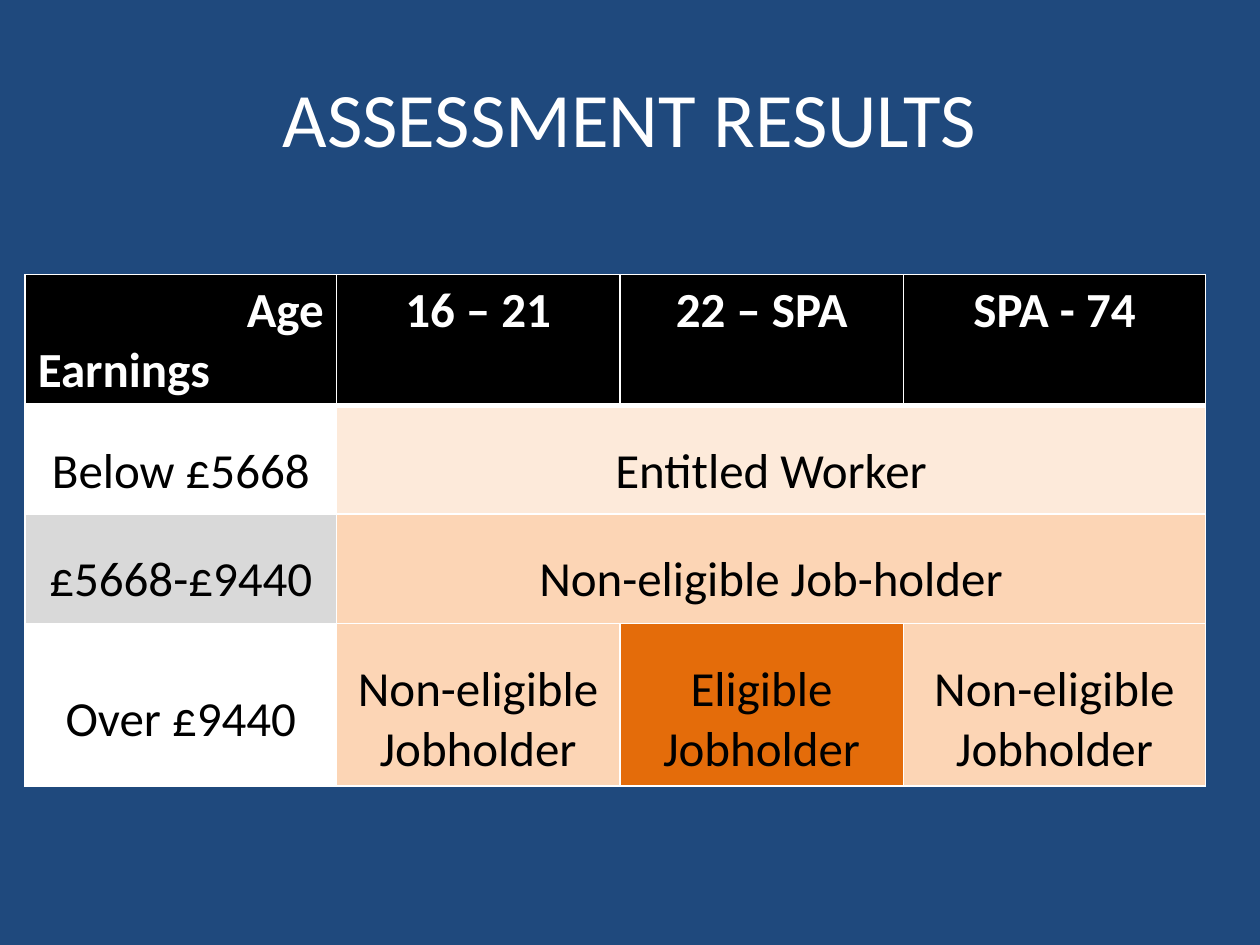
from pptx import Presentation
from pptx.dml.color import RGBColor
from pptx.enum.text import MSO_ANCHOR, PP_ALIGN
from pptx.oxml.ns import qn
from pptx.util import Inches, Pt
from lxml.etree import SubElement

NAVY = RGBColor(0x1F, 0x49, 0x7D)
WHITE = RGBColor(0xFF, 0xFF, 0xFF)
BLACK = RGBColor(0x00, 0x00, 0x00)
GREY = RGBColor(0xD9, 0xD9, 0xD9)
CREAM = RGBColor(0xFD, 0xEA, 0xDA)
PEACH = RGBColor(0xFC, 0xD5, 0xB5)
ORANGE = RGBColor(0xE4, 0x6C, 0x0A)

COLS = [2.47, 2.25, 2.25, 2.4]
ROWS = [1.04, 0.86, 0.87, 1.29]
HEAD = ["Age\nEarnings", "16 – 21", "22 – SPA", "SPA - 74"]
BODY = [
    [("Below £5668", WHITE), ("Entitled Worker", CREAM)],
    [("£5668-£9440", GREY), ("Non-eligible Job-holder", PEACH)],
    [
        ("Over £9440", WHITE),
        ("Non-eligible\nJobholder", PEACH),
        ("Eligible\nJobholder", ORANGE),
        ("Non-eligible\nJobholder", PEACH),
    ],
]


def style(para, size, color, bold=False):
    """Centre a paragraph and set its font."""
    para.alignment = PP_ALIGN.CENTER
    for run in para.runs:
        font = run.font
        font.name, font.size, font.bold = "Calibri", Pt(size), bold
        font.color.rgb = color


def border(cell, top, bottom):
    """Draw white lines on the four sides of a cell."""
    props = cell._tc.get_or_add_tcPr()
    for side, width in zip("LRTB", (1, 1, top, bottom)):
        line = SubElement(props, qn(f"a:ln{side}"), w=str(Pt(width)))
        fill = SubElement(line, qn("a:solidFill"))
        SubElement(fill, qn("a:srgbClr"), val=str(WHITE))


def write(cell, text, fill, color, bold=False):
    """Fill a cell and write its text."""
    cell.fill.solid()
    cell.fill.fore_color.rgb = fill
    cell.text_frame.text = text
    for para in cell.text_frame.paragraphs:
        style(para, 28, color, bold)


def add_title(slide, left, top, width, height):
    """Place the slide title."""
    box = slide.shapes.add_textbox(left, top, width, height)
    frame = box.text_frame
    frame.word_wrap = True
    frame.vertical_anchor = MSO_ANCHOR.MIDDLE
    frame.text = "ASSESSMENT RESULTS"
    style(frame.paragraphs[0], 44, WHITE)


def add_grid(slide, left, top, width, height):
    """Place the table of worker types by age and earnings."""
    table = slide.shapes.add_table(
        len(ROWS), len(COLS), left, top, width, height
    ).table
    table.horz_banding = False
    for col, size in zip(table.columns, COLS):
        col.width = int(width * size / sum(COLS))
    for row, size in zip(table.rows, ROWS):
        row.height = int(height * size / sum(ROWS))
    for i, row in enumerate(table.rows):
        for cell in row.cells:
            border(cell, 3 if i == 1 else 1, 3 if i == 0 else 1)

    for j, text in enumerate(HEAD):
        write(table.cell(0, j), text, BLACK, WHITE, True)
    age, earn = table.cell(0, 0).text_frame.paragraphs
    age.alignment, earn.alignment = PP_ALIGN.RIGHT, PP_ALIGN.LEFT

    for i, row in enumerate(BODY, 1):
        for j, (text, fill) in enumerate(row):
            cell = table.cell(i, j)
            write(cell, text, fill, BLACK)
            cell.text_frame.paragraphs[0].line_spacing = 1.5
        if len(row) == 2:
            table.cell(i, 1).merge(table.cell(i, 3))
    table.cell(3, 0).text_frame.paragraphs[0].line_spacing = 2.0


def main():
    """Build and save the slide."""
    deck = Presentation()
    deck.slide_width, deck.slide_height = Inches(10), Inches(7.5)
    slide = deck.slides.add_slide(deck.slide_layouts[6])
    slide.background.fill.solid()
    slide.background.fill.fore_color.rgb = NAVY
    add_title(slide, Inches(0.5), Inches(0.3), Inches(9), Inches(1.25))
    add_grid(slide, Inches(0.2), Inches(2.18), Inches(9.37), Inches(4.06))
    deck.save("out.pptx")


if __name__ == "__main__":
    main()
